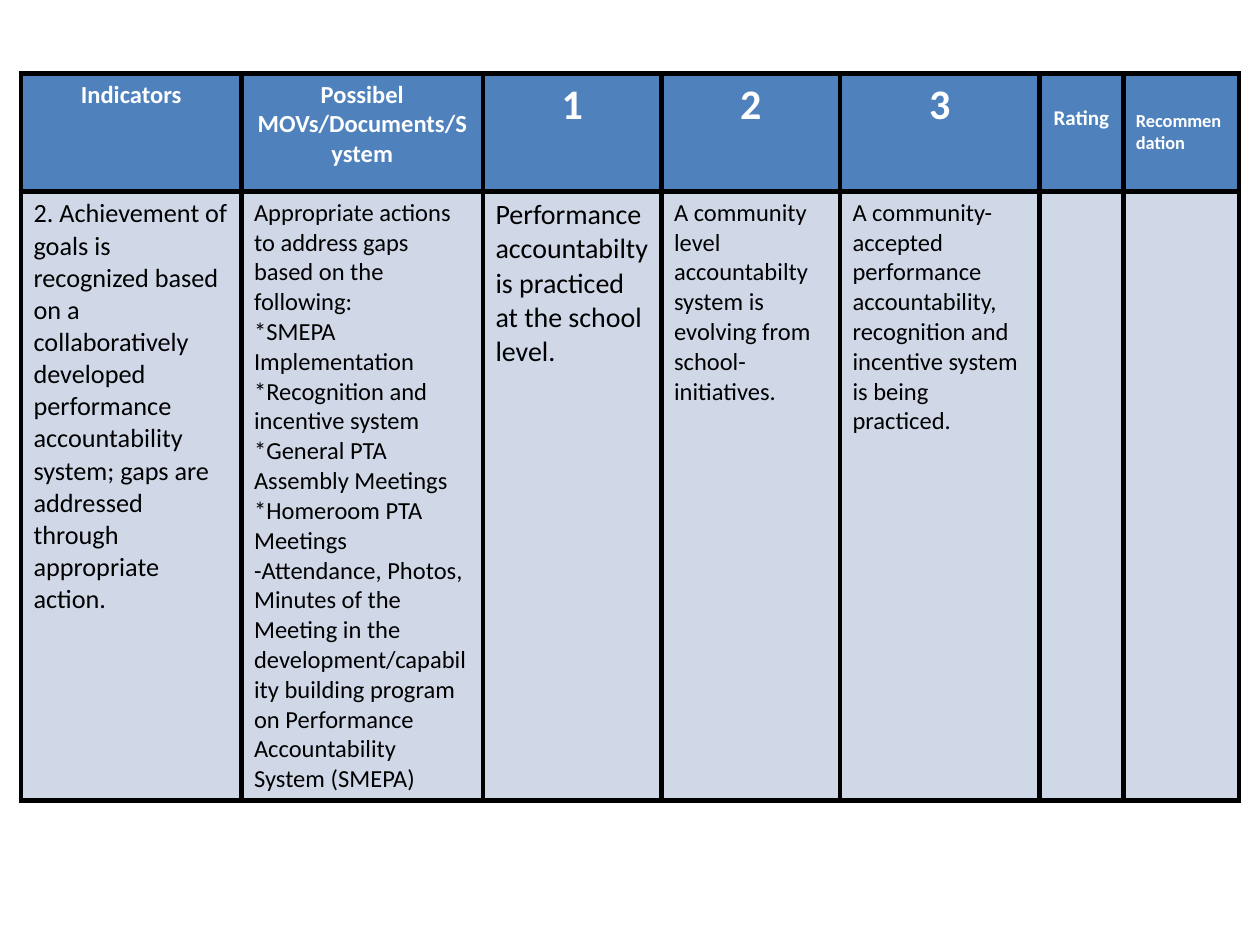
from lxml import etree
from pptx import Presentation
from pptx.dml.color import RGBColor
from pptx.enum.text import PP_ALIGN
from pptx.oxml.ns import qn
from pptx.util import Pt

LEFT, CENTER = PP_ALIGN.LEFT, PP_ALIGN.CENTER
FONT = "Calibri"
BLACK, WHITE = "000000", "FFFFFF"
HEADER_FILL, BODY_FILL = "4F81BD", "D0D8E8"
BORDER_WIDTH = 3

COLUMN_WIDTHS = [126, 138, 102, 102, 114, 48, 66]
ROW_HEIGHTS = [67.5, 343.5]

# Heading, size, alignment, top margin
HEADINGS = [
    ("Indicators", 14, CENTER, 3.6),
    ("Possibel MOVs/Documents/System", 14, CENTER, 3.6),
    ("1", 24, CENTER, 3.6),
    ("2", 24, CENTER, 3.6),
    ("3", 24, CENTER, 3.6),
    ("Rating", 12, CENTER, 18.25),
    ("Recommendation", 10.5, LEFT, 20.7),
]

# Paragraphs, size
INDICATOR_ROW = [
    (["2. Achievement of goals is recognized based on a collaboratively "
      "developed performance accountability system; gaps are addressed "
      "through appropriate action."], 15),
    (["Appropriate actions to address gaps based on the following:",
      "*SMEPA Implementation",
      "*Recognition and incentive system",
      "*General PTA Assembly Meetings",
      "*Homeroom PTA Meetings",
      "-Attendance, Photos, Minutes of the Meeting in the "
      "development/capability building program on Performance "
      "Accountability System (SMEPA)"], 14),
    (["Performance accountabilty is practiced at the school level."], 16),
    (["A community level accountabilty system is evolving from "
      "school-initiatives."], 14),
    (["A community-accepted performance accountability, recognition and "
      "incentive system is being practiced."], 14),
    ([], 14),
    ([], 14),
]


def color(value):
    return RGBColor.from_string(value)


def set_borders(cell):
    """Draw all four edges; they must precede the fill in the cell properties."""
    properties = cell._tc.get_or_add_tcPr()
    for index, edge in enumerate(("a:lnL", "a:lnR", "a:lnT", "a:lnB")):
        line = etree.Element(qn(edge), w=str(Pt(BORDER_WIDTH)))
        fill = etree.SubElement(line, qn("a:solidFill"))
        etree.SubElement(fill, qn("a:srgbClr"), val=BLACK)
        properties.insert(index, line)


def fill_cell(cell, paragraphs, size, text_color, fill, bold=False,
              align=LEFT, top_margin=3.6):
    cell.fill.solid()
    cell.fill.fore_color.rgb = color(fill)
    cell.margin_top = Pt(top_margin)
    set_borders(cell)
    for index, text in enumerate(paragraphs):
        frame = cell.text_frame
        para = frame.add_paragraph() if index else frame.paragraphs[0]
        para.alignment = align
        span = para.add_run()
        span.text = text
        span.font.name = FONT
        span.font.size = Pt(size)
        span.font.bold = bold
        span.font.color.rgb = color(text_color)


def add_rating_table(page, left, top, width, height):
    frame = page.shapes.add_table(len(ROW_HEIGHTS), len(COLUMN_WIDTHS),
                                  Pt(left), Pt(top), Pt(width), Pt(height))
    table = frame.table
    table.horz_banding = False
    scale = width / sum(COLUMN_WIDTHS)
    for column, column_width in zip(table.columns, COLUMN_WIDTHS):
        column.width = Pt(column_width * scale)
    for row, row_height in zip(table.rows, ROW_HEIGHTS):
        row.height = Pt(row_height * height / sum(ROW_HEIGHTS))

    # Header row
    for index, (text, size, align, margin) in enumerate(HEADINGS):
        fill_cell(table.cell(0, index), [text], size, WHITE, HEADER_FILL,
                  True, align, margin)

    # Indicator row
    for index, (paragraphs, size) in enumerate(INDICATOR_ROW):
        fill_cell(table.cell(1, index), paragraphs, size, BLACK, BODY_FILL)


def main():
    deck = Presentation()
    deck.slide_width, deck.slide_height = Pt(720), Pt(540)
    page = deck.slides.add_slide(deck.slide_layouts[6])
    add_rating_table(page, 12, 42, 696, 411)
    deck.save("out.pptx")


if __name__ == "__main__":
    main()
